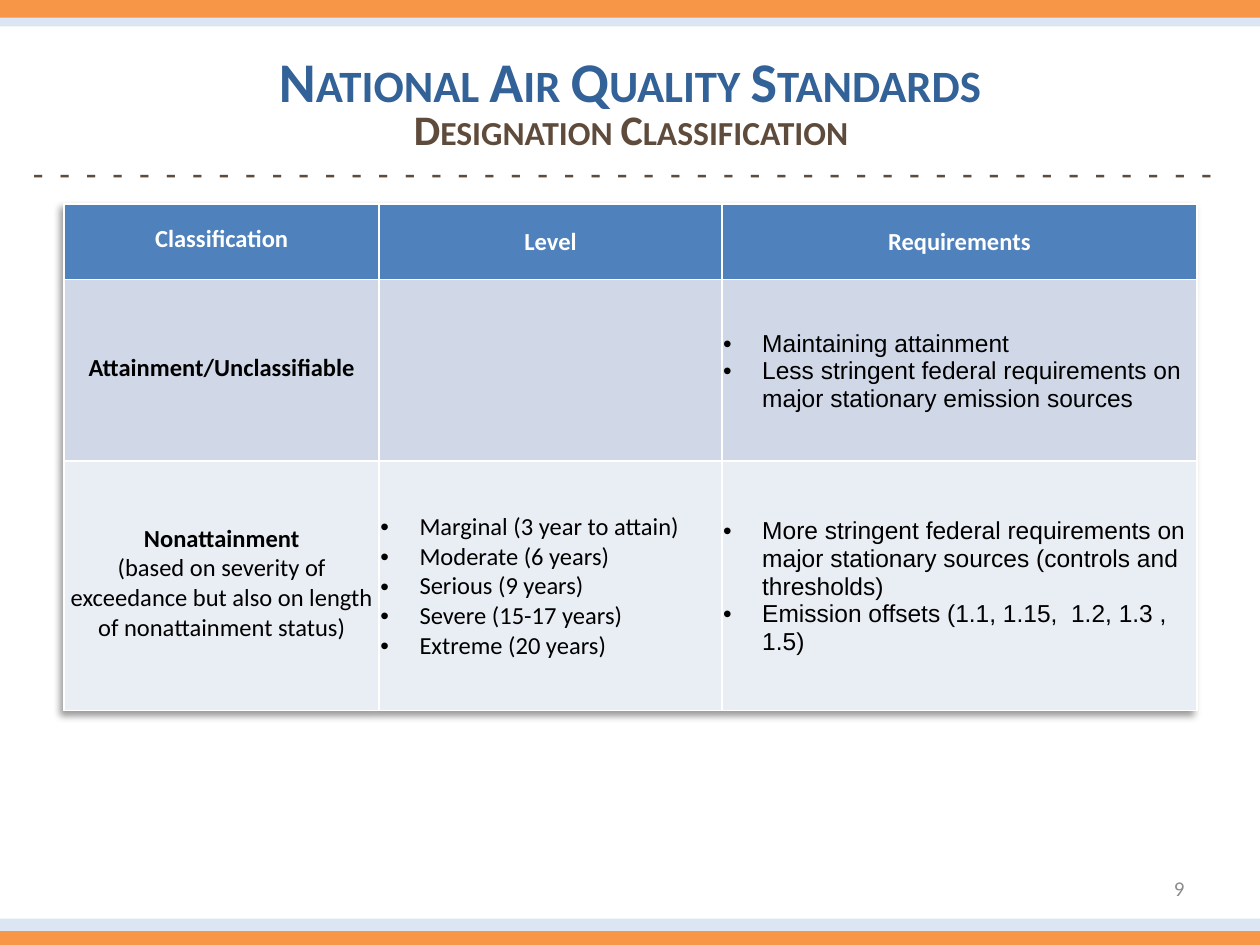
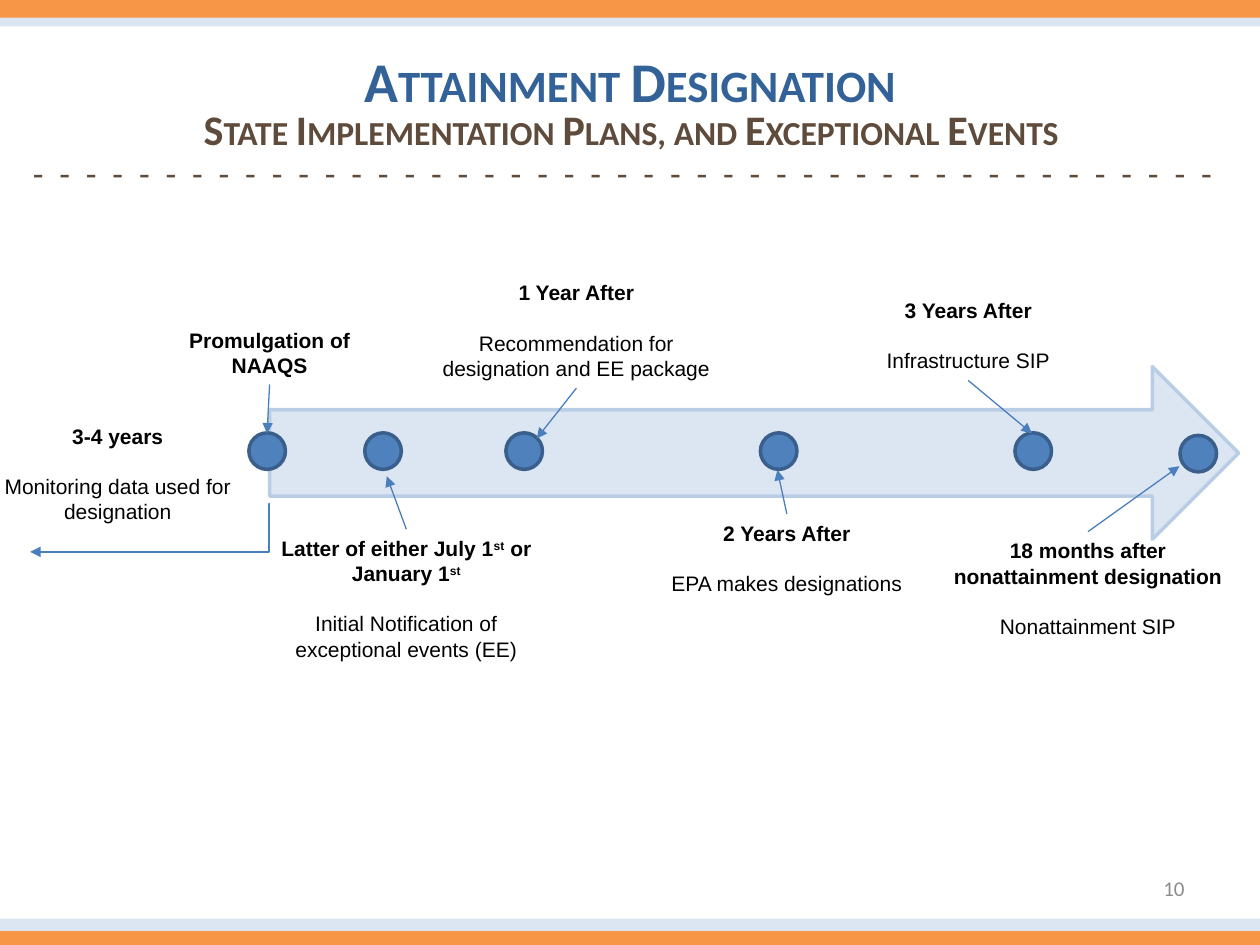
from lxml import etree
from pptx import Presentation
from pptx.dml.color import RGBColor
from pptx.enum.shapes import MSO_CONNECTOR, MSO_SHAPE
from pptx.enum.text import MSO_ANCHOR, MSO_AUTO_SIZE, PP_ALIGN
from pptx.oxml.ns import qn
from pptx.util import Inches, Pt

LEFT, MID, RIGHT = PP_ALIGN.LEFT, PP_ALIGN.CENTER, PP_ALIGN.RIGHT
TOP, CENTRE = MSO_ANCHOR.TOP, MSO_ANCHOR.MIDDLE
RECT, OVAL, ARROW = MSO_SHAPE.RECTANGLE, MSO_SHAPE.OVAL, MSO_SHAPE.RIGHT_ARROW
STRAIGHT, ELBOW = MSO_CONNECTOR.STRAIGHT, MSO_CONNECTOR.ELBOW
FIXED = MSO_AUTO_SIZE.NONE

SANS, BODY = "Arial", "Calibri"
ORANGE, PALE, NAVY, BROWN, GREY = "F79646", "DCE6F2", "326297", "5F4B3B", "8C8C8C"
BLUE, EDGE, RIM, WIRE = "4F81BD", "B9CDE5", "3A5F8C", "4B7EBC"
WHITE, BLACK = "FFFFFF", "000000"
FILLS = (BLUE, "D0D8E8", "E9EDF4")
PITCH = Pt(14.4)
HARD = chr(160)
DASHES = (f"-{HARD} " * 8 + f"-{HARD * 2}") * 5

COLS = (2.5, 2.72, 3.77)
ROWS = (0.6, 1.44, 1.98)
HEADS = ("Classification", "Level", "Requirements")
GRADES = (
    (["Attainment/Unclassifiable"], [], [
        "Maintaining attainment",
        "Less stringent federal requirements on major stationary emission sources"]),
    (["Nonattainment",
      "(based on severity of exceedance but also on length of nonattainment status)"],
     ["Marginal (3 year to attain)", "Moderate (6 years)", "Serious (9 years)",
      "Severe (15-17 years)", "Extreme (20 years)"],
     ["More stringent federal requirements on major stationary sources "
      "(controls and thresholds)",
      "Emission offsets (1.1, 1.15,  1.2, 1.3 , 1.5)"]),
)

DOT = 0.29
DOTS = ((-0.02, 0.67), (0.9, 0.67), (2.02, 0.67), (4.04, 0.67), (6.06, 0.67), (7.37, 0.69))
STEPS = (
    ((-0.89, -0.36, 1.78, 0.5), (-0.02, 0.53), ["Promulgation of NAAQS"]),
    ((-0.08, 1.29, 2.33, 1.11), (0.93, 0.87),
     ["Latter of either July 1|st| or January 1|st",
      "Initial Notification of exceptional events (EE)"]),
    ((1.27, -0.74, 2.33, 0.91), (2.12, 0.57),
     ["1 Year After", "Recommendation for designation and EE package"]),
    ((2.94, 1.17, 2.33, 0.71), (4.03, 0.82), ["2 Years After", "EPA makes designations"]),
    ((4.38, -0.6, 2.33, 0.71), (6.05, 0.53), ["3 Years After", "Infrastructure SIP"]),
    ((5.33, 1.31, 2.33, 1.11), (7.22, 0.79),
     ["18 months after nonattainment designation", "Nonattainment SIP"]),
)
PAST = ((-2.37, 0.4, 2.33, 0.91), ["3-4 years", "Monitoring data used for designation"])


def tint(code):
    """Turn a hex string into a colour."""
    return RGBColor.from_string(code)


def span(box):
    """Turn a box in inches into lengths."""
    return [Inches(n) for n in box]


def shift(box, part):
    """Move a part from the box's corner onto the slide."""
    return (box[0] + part[0], box[1] + part[1], *part[2:])


def style(para, size, color, face=BODY, bold=False, align=MID):
    """Set the font and alignment of a paragraph."""
    para.alignment = align
    font = para.font
    font.name, font.size, font.bold = face, Pt(size), bold
    font.color.rgb = tint(color)


def frame(shape, anchor=TOP):
    """Ready a text frame with wrapping and a fixed size."""
    text = shape.text_frame
    text.word_wrap, text.auto_size = True, FIXED
    text.vertical_anchor = anchor
    return text


def write(slide, box, words, size, color, **look):
    """Add one line of text in a box."""
    text = frame(slide.shapes.add_textbox(*span(box)), look.pop("anchor", TOP))
    text.text = words
    style(text.paragraphs[0], size, color, **look)
    return text.paragraphs[0]


def caps(para):
    """Show a paragraph in small capitals."""
    for run in para.runs:
        run._r.get_or_add_rPr().set("cap", "small")


def draw(slide, kind, box, fill, line=None):
    """Add a flat filled shape."""
    shape = slide.shapes.add_shape(kind, *span(box))
    shape.shadow.inherit = False
    shape.fill.solid()
    shape.fill.fore_color.rgb = tint(fill)
    if line:
        shape.line.color.rgb = tint(line)
        shape.line.width = Pt(2)
    else:
        shape.line.fill.background()


def link(slide, start, end, kind=STRAIGHT):
    """Add a thin line with an arrowhead at its end."""
    wire = slide.shapes.add_connector(kind, *span((*start, *end)))
    wire.line.color.rgb = tint(WIRE)
    wire.line.width = Pt(0.75)
    etree.SubElement(wire.line._get_or_add_ln(), qn("a:tailEnd"), type="triangle")
    etree.SubElement(wire._element.spPr, qn("a:effectLst"))
    return wire


def bands(slide, box):
    """Draw the coloured bands at the top and bottom of a box."""
    tall = box[3]
    for top, high, fill in ((0.1, 0.11, PALE), (0, 0.14, ORANGE),
                            (tall - 0.21, 0.11, PALE), (tall - 0.11, 0.11, ORANGE)):
        draw(slide, RECT, shift(box, (0, top, box[2], high)), fill)


def header(slide, box, title, sub):
    """Place the title, the line below it and the row of dashes."""
    wide = box[2]
    name = slide.shapes.title
    name.left, name.top, name.width, name.height = span(shift(box, (0, 0, wide, 0.64)))
    text = frame(name)
    text.text = title
    style(text.paragraphs[0], 32, NAVY, bold=True)
    caps(text.paragraphs[0])
    caps(write(slide, shift(box, (0.01, 0.45, wide, 0.47)), sub, 24, BROWN, bold=True))
    write(slide, shift(box, (0.01, 0.83, wide, 0.45)), DASHES, 20, BROWN)


def page(deck, title, sub, number):
    """Add a slide with the shared parts."""
    slide = deck.slides.add_slide(deck.slide_layouts[5])
    bands(slide, (0, 0, 10, 7.5))
    header(slide, (0, 0.32, 10, 1.28), title, sub)
    write(slide, (7.17, 6.85, 2.33, 0.4), str(number), 12, GREY, align=RIGHT, anchor=CENTRE)
    return slide


def bullet(para):
    """Give a paragraph a hanging bullet."""
    props = para._p.get_or_add_pPr()
    props.set("marL", str(Inches(0.31)))
    props.set("indent", str(-Inches(0.31)))
    etree.SubElement(props, qn("a:buFont"), typeface=SANS)
    etree.SubElement(props, qn("a:buChar"), char="•")


def shade(table):
    """Cast a soft shadow to the lower left of a table."""
    props = table._tbl.tblPr
    effects = etree.Element(qn("a:effectLst"))
    props.insert(0, effects)
    cast = etree.SubElement(effects, qn("a:outerShdw"), blurRad="50800", dist="38100",
                            dir="8100000", algn="tr", rotWithShape="0")
    hue = etree.SubElement(cast, qn("a:prstClr"), val="black")
    etree.SubElement(hue, qn("a:alpha"), val="40000")


def fill(cell, row, col, lines):
    """Fill and format one cell of the table."""
    cell.fill.solid()
    cell.fill.fore_color.rgb = tint(FILLS[row])
    cell.vertical_anchor = CENTRE
    cell.margin_left = cell.margin_right = cell.margin_top = Inches(0.01)
    cell.margin_bottom = Inches(0 if col else 0.05)
    cell.text = "\n".join(lines)
    listed = row > 0 and col > 0
    for i, para in enumerate(cell.text_frame.paragraphs):
        if listed and lines:
            bullet(para)
        style(para, 14, BLACK if row else WHITE, SANS if row and col == 2 else BODY,
              not listed and i == 0, LEFT if listed else MID)


def grid(slide, box):
    """Add the table of classes."""
    table = slide.shapes.add_table(len(ROWS), len(COLS), *span(box)).table
    shade(table)
    for col, wide in zip(table.columns, COLS):
        col.width = Inches(wide)
    for row, high in zip(table.rows, ROWS):
        row.height = Inches(high)
    for r, cells in enumerate(([[head] for head in HEADS], *GRADES)):
        for c, lines in enumerate(cells):
            fill(table.cell(r, c), r, c, lines)


def label(slide, box, lines):
    """Write a bold heading with a plain note below; bars enclose superscripts."""
    text = frame(slide.shapes.add_textbox(*span(box)))
    for i, line in enumerate(lines):
        para = text.add_paragraph() if i else text.paragraphs[0]
        for j, part in enumerate(line.split("|")):
            run = para.add_run()
            run.text = part
            if j % 2:
                run._r.get_or_add_rPr().set("baseline", "30000")
        para.line_spacing = PITCH
        if i < len(lines) - 1:
            para.space_after = PITCH
        style(para, 12, BLACK, SANS, i == 0)


def course(slide, box):
    """Draw the time arrow with its dots, labels and pointers."""
    draw(slide, ARROW, box, PALE, EDGE)
    for x, y in DOTS:
        draw(slide, OVAL, shift(box, (x - DOT / 2, y - DOT / 2, DOT, DOT)), BLUE, RIM)
    for spot, tip, lines in STEPS:
        left, top, wide, high = spot
        label(slide, shift(box, spot), lines)
        near = top if top > tip[1] else top + high
        link(slide, shift(box, (left + wide / 2, near)), shift(box, tip))
    label(slide, shift(box, PAST[0]), PAST[1])
    back = link(slide, shift(box, (0, 1.09)), shift(box, (-1.9, 1.47)), ELBOW)
    guides = back._element.spPr.find(qn("a:prstGeom")).find(qn("a:avLst"))
    etree.SubElement(guides, qn("a:gd"), name="adj1", fmla="val 300")


def main():
    """Build and save the slides."""
    deck = Presentation()
    deck.slide_width, deck.slide_height = Inches(10), Inches(7.5)
    grid(page(deck, "National Air Quality Standards", "Designation Classification", 9),
         (0.51, 1.62, 8.99, 4.02))
    course(page(deck, "Attainment Designation",
                "State Implementation Plans, and Exceptional Events", 10),
           (2.14, 2.91, 7.69, 1.37))
    deck.save("out.pptx")


if __name__ == "__main__":
    main()
